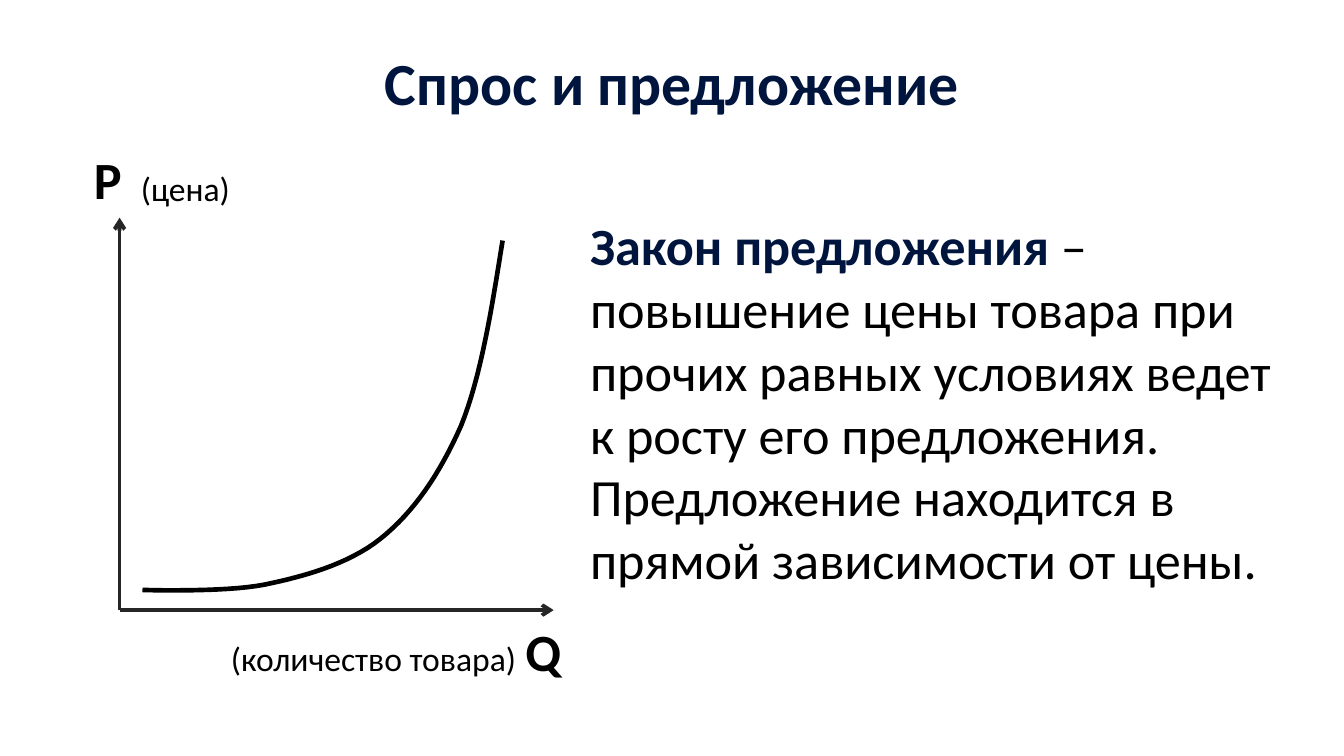
"""Build a slide on the law of supply with its price and quantity graph."""
from dataclasses import dataclass

from lxml.etree import SubElement
from pptx import Presentation
from pptx.dml.color import RGBColor
from pptx.enum.shapes import MSO_CONNECTOR as Link
from pptx.enum.text import MSO_ANCHOR as Anchor, MSO_AUTO_SIZE as Fit, PP_ALIGN as Align
from pptx.oxml.ns import qn
from pptx.util import Inches, Pt

NAVY = RGBColor(0x00, 0x15, 0x3E)
BLACK = RGBColor(0, 0, 0)
GRAY = RGBColor(0x26, 0x26, 0x26)
FONT = "Calibri"
COLS = 100
ROWS = COLS * 9 / 16
CELL = Inches(0.1)
STEPS = 16

Spot = tuple[float, float]


@dataclass(frozen=True)
class Box:
    """Frame in grid columns and rows."""
    col: float
    row: float
    wide: float
    high: float


@dataclass(frozen=True)
class Run:
    """Piece of text in one style."""
    text: str
    size: int
    bold: bool = False
    color: RGBColor = BLACK


@dataclass(frozen=True)
class Label:
    """Axis caption made of one run."""
    box: Box
    run: Run
    align: Align = Align.LEFT


ORIGIN: Spot = (8.9, 45.4)
AXES: list[Spot] = [(8.9, 16.2), (41.2, 45.4)]
LABELS = [
    [Label(Box(6, 10.5, 3.1, 5.7), Run("Р", 28, True)),
     Label(Box(9.5, 12, 11, 4), Run("(цена)", 18))],
    [Label(Box(38.1, 45.6, 3.1, 5.7), Run("Q", 28, True)),
     Label(Box(14.1, 47, 25.3, 4), Run("(количество товара)", 18), Align.RIGHT)],
]
START: Spot = (37.4, 17.9)
BENDS: list[tuple[Spot, Spot, Spot]] = [
    ((36.6, 22.9), (35.8, 28), (34.3, 31.7)),
    ((32.7, 35.3), (30.8, 38.1), (28.3, 40.1)),
    ((25.9, 42), (22.6, 42.9), (19.7, 43.5)),
    ((16.7, 44.1), (10.6, 43.9), (10.6, 43.9)),
]
TITLE = [[Run("Спрос и предложение", 32, True, NAVY)]]
BODY = [
    [Run("Закон предложения ", 28, True, NAVY),
     Run("–повышение цены товара при прочих равных условиях ведет "
         "к росту его предложения.", 28)],
    [Run("Предложение находится в прямой зависимости от цены.", 28)],
]


def grid(num: float) -> int:
    """Turn grid cells into a length."""
    return round(num * CELL)


def place(shape, box: Box) -> None:
    """Move a shape to its frame."""
    shape.left, shape.top = grid(box.col), grid(box.row)
    shape.width, shape.height = grid(box.wide), grid(box.high)


def write(shape, paras: list[list[Run]], align: Align = Align.LEFT) -> None:
    """Fill a shape with paragraphs, run by run."""
    frame = shape.text_frame
    frame.word_wrap = True
    frame.auto_size = Fit.NONE
    frame.vertical_anchor = Anchor.TOP
    for num, runs in enumerate(paras):
        para = frame.add_paragraph() if num else frame.paragraphs[0]
        props = para._p.get_or_add_pPr()
        props.set("marL", "0")
        props.set("indent", "0")
        SubElement(props, qn("a:buNone"))
        para.alignment = align
        para.space_before = Pt(0)
        for item in runs:
            run = para.add_run()
            run.text = item.text
            font = run.font
            font.name, font.size, font.bold = FONT, Pt(item.size), item.bold
            font.color.rgb = item.color


def draw_axis(shapes, end: Spot) -> None:
    """Draw an arrow from the origin."""
    line = shapes.add_connector(Link.STRAIGHT, *map(grid, ORIGIN + end))
    line.line.color.rgb = GRAY
    line.line.width = Pt(2)
    SubElement(line.line._get_or_add_ln(), qn("a:tailEnd"), type="arrow")
    SubElement(line._element.spPr, qn("a:effectLst"))


def add_label(shapes, label: Label) -> None:
    """Add an axis caption."""
    shape = shapes.add_textbox(0, 0, 0, 0)
    place(shape, label.box)
    write(shape, [[label.run]], label.align)


def bend(ends: tuple[Spot, Spot, Spot, Spot]) -> list[Spot]:
    """List points along a cubic curve."""
    spots = []
    for step in range(1, STEPS + 1):
        t = step / STEPS
        u = 1 - t
        parts = (u**3, 3 * u * u * t, 3 * u * t * t, t**3)
        x, y = (sum(p * e[k] for p, e in zip(parts, ends)) for k in (0, 1))
        spots.append((grid(x), grid(y)))
    return spots


def draw_curve(shapes) -> None:
    """Draw the supply curve."""
    pen = shapes.build_freeform(*map(grid, START))
    last = START
    for part in BENDS:
        pen.add_line_segments(bend((last, *part)), close=False)
        last = part[-1]
    curve = pen.convert_to_shape()
    curve.shadow.inherit = False
    curve.fill.background()
    curve.line.color.rgb = BLACK
    curve.line.width = Pt(2.5)


def main() -> None:
    """Make the slide and save it."""
    deck = Presentation()
    deck.slide_width, deck.slide_height = grid(COLS), grid(ROWS)
    slide = deck.slides.add_slide(deck.slide_layouts[1])
    shapes = slide.shapes
    title, body = shapes.title, slide.placeholders[1]
    place(title, Box(26.4, 2.9, 47.2, 6.4))
    write(title, TITLE, Align.CENTER)
    place(body, Box(42.9, 15.4, 53.4, 29.3))
    write(body, BODY)
    axes = shapes.add_group_shape().shapes
    for end in AXES:
        draw_axis(axes, end)
    for pair in LABELS:
        group = shapes.add_group_shape().shapes
        for label in pair:
            add_label(group, label)
    draw_curve(shapes)
    deck.save("out.pptx")


if __name__ == "__main__":
    main()
